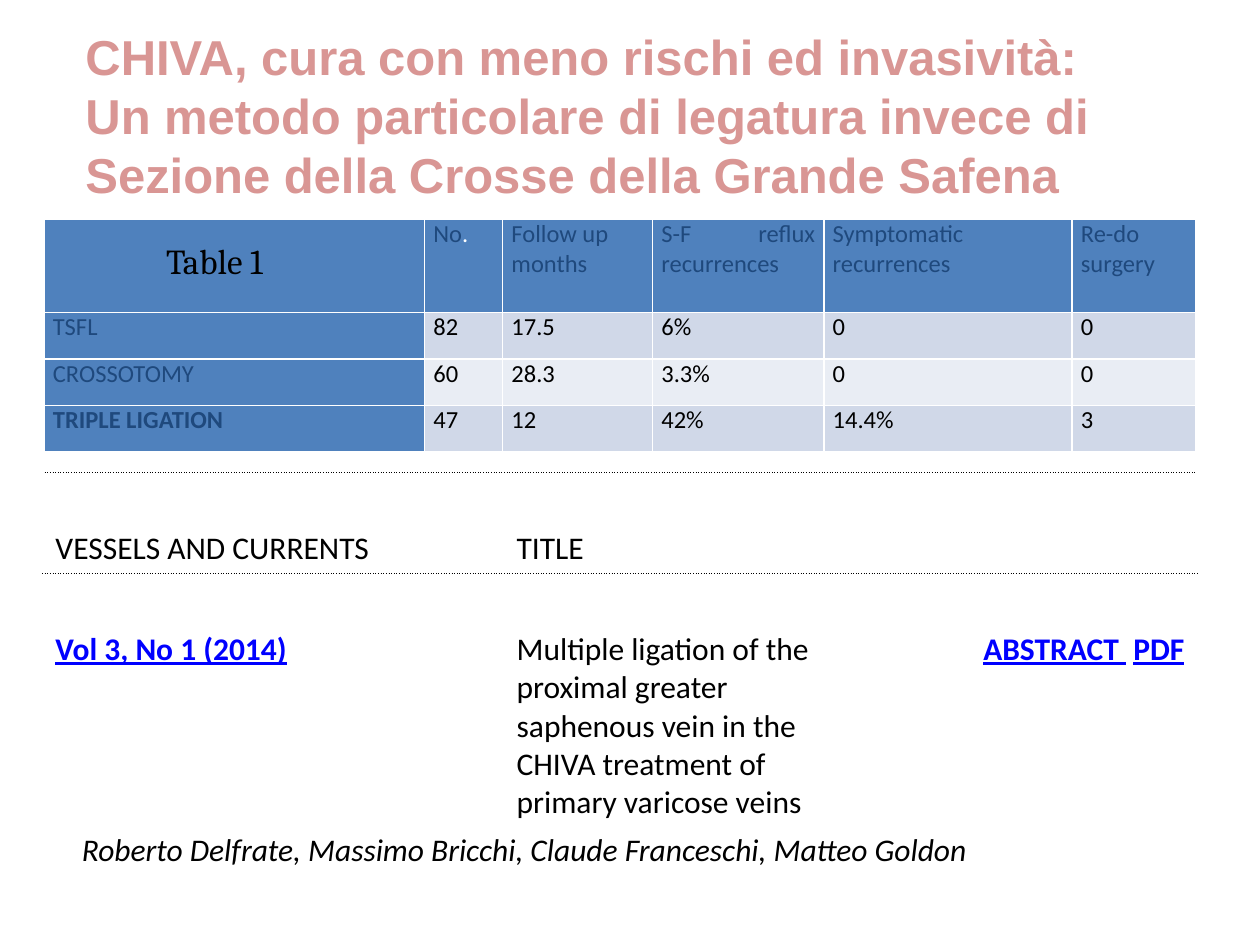
from lxml import etree
from pptx import Presentation
from pptx.dml.color import RGBColor
from pptx.enum.text import MSO_ANCHOR as Anchor, PP_ALIGN as Align
from pptx.oxml.ns import qn
from pptx.util import Inches, Pt

COLORS = {
    "white": "FFFFFF",
    "black": "000000",
    "navy": "1F497D",
    "blue": "4F81BD",
    "band": "D0D8E8",
    "pale": "E9EDF4",
    "link": "0000FF",
    "rose": "D99694",
}
RESULTS = [
    ("", "No", "Follow up\nmonths", "S-F reflux recurrences",
     "Symptomatic\nrecurrences", "Re-do\nsurgery"),
    ("TSFL", "82", "17.5", "6%", "0", "0"),
    ("CROSSOTOMY", "60", "28.3", "3.3%", "0", "0"),
    ("TRIPLE LIGATION", "47", "12", "42%", "14.4%", "3"),
]


def rgb(name):
    return RGBColor.from_string(COLORS[name])


def style(font, name, size, color, bold=False, italic=False):
    font.name, font.size = name, Pt(size)
    font.color.rgb = rgb(color)
    font.bold, font.italic = bold, italic


def write(frame, text, name, size, color, align=Align.LEFT, **flags):
    """Fill a text frame with one paragraph per line of text."""
    for index, line in enumerate(text.split("\n")):
        para = frame.add_paragraph() if index else frame.paragraphs[0]
        para.text = line
        para.alignment = align
        style(para.font, name, size, color, **flags)


def write_links(frame, pieces, align=Align.LEFT):
    """Write (text, is_link) pieces as runs; links are bold, blue and underlined."""
    para = frame.paragraphs[0]
    para.alignment = align
    for text, is_link in pieces:
        span = para.add_run()
        span.text = text
        style(span.font, "Calibri", 18, "link" if is_link else "black", bold=is_link)
        span.font.underline = is_link


def set_borders(cell, sides, color, width, dash="solid"):
    """Draw the given sides, in the order L, R, T, B."""
    properties = cell._tc.get_or_add_tcPr()
    for index, side in enumerate(sides):
        line = etree.Element(qn(f"a:ln{side}"), w=str(Pt(width)))
        fill = etree.SubElement(line, qn("a:solidFill"))
        etree.SubElement(fill, qn("a:srgbClr"), val=COLORS[color])
        etree.SubElement(line, qn("a:prstDash"), val=dash)
        properties.insert(index, line)


def fill_cell(cell, color):
    cell.fill.solid()
    cell.fill.fore_color.rgb = rgb(color)


def add_grid(page, left, top, widths, heights):
    table = page.shapes.add_table(
        len(heights), len(widths), Inches(left), Inches(top),
        Inches(sum(widths)), Inches(sum(heights))).table
    table.first_row = table.horz_banding = False
    for column, width in zip(table.columns, widths):
        column.width = Inches(width)
    for row, height in zip(table.rows, heights):
        row.height = Inches(height)
    return table


def add_results(page):
    table = add_grid(page, 0.35, 1.74, [3.02, 0.62, 1.19, 1.36, 1.97, 0.98],
                     [0.74, 0.37, 0.37, 0.37])
    for r, values in enumerate(RESULTS):
        for c, value in enumerate(values):
            cell = table.cell(r, c)
            heading = r == 0 or c == 0
            cell.margin_left = cell.margin_right = Inches(0.07)
            cell.margin_top = cell.margin_bottom = 0
            fill_cell(cell, "blue" if heading else "band" if r % 2 else "pale")
            set_borders(cell, "LRTB", "white", 1)
            if value:
                write(cell.text_frame, value, "Calibri", 14,
                      "navy" if heading else "black", Align.JUSTIFY,
                      bold=value == "TRIPLE LIGATION")
    period = table.cell(0, 1).text_frame.paragraphs[0].add_run()
    period.text = "."
    period.font.color.rgb = rgb("white")


def add_publication(page):
    table = add_grid(page, 0.34, 3.75, [3.66, 2.75, 2.75], [0.4, 0.4, 0.4, 1.6, 0.4])
    dotted_sides = {0: "T", 1: "B", 2: "T"}
    for r in range(5):
        for c in range(3):
            cell = table.cell(r, c)
            fill_cell(cell, "white")
            set_borders(cell, dotted_sides.get(r, ""), "black", 0.75, "sysDot")
    for r, first in ((0, 0), (1, 1), (2, 0), (4, 0)):
        table.cell(r, first).merge(table.cell(r, 2))

    for c, heading in enumerate(("VESSELS AND CURRENTS", "TITLE")):
        cell = table.cell(1, c)
        cell.vertical_anchor = Anchor.BOTTOM
        write(cell.text_frame, heading, "Calibri", 18, "black")

    issue, title, downloads = (table.cell(3, c).text_frame for c in range(3))
    write_links(issue, [("Vol 3, No 1 (2014)", True)])
    write(title, "Multiple ligation of the proximal greater saphenous vein in the "
          "CHIVA treatment of primary varicose veins", "Calibri", 18, "black")
    write_links(downloads, [("ABSTRACT ", True), (" ", False), ("PDF", True)],
                Align.RIGHT)

    authors = table.cell(4, 0)
    authors.margin_left = Inches(0.31)
    authors.vertical_anchor = Anchor.MIDDLE
    write(authors.text_frame,
          "Roberto Delfrate, Massimo Bricchi, Claude Franceschi, Matteo Goldon",
          "Calibri", 18, "black", italic=True)


def add_text(page, text, left, top, width, height, name, size, color, **flags):
    box = page.shapes.add_textbox(Inches(left), Inches(top), Inches(width), Inches(height))
    box.text_frame.word_wrap = True
    write(box.text_frame, text, name, size, color, **flags)
    return box


def main():
    deck = Presentation()
    deck.slide_width, deck.slide_height = Inches(10), Inches(7.5)
    page = deck.slides.add_slide(deck.slide_layouts[6])
    add_results(page)
    add_text(page, "Table 1", 1.22, 1.85, 1.36, 0.91, "Cambria", 20, "black")
    add_publication(page)
    title = add_text(
        page, "CHIVA, cura con meno rischi ed invasività: Un metodo particolare di "
        "legatura invece di Sezione della Crosse della Grande Safena",
        0.58, 0.16, 8.5, 1.51, "Arial", 28, "rose", bold=True)
    title.fill.solid()
    title.fill.fore_color.rgb = rgb("white")
    deck.save("out.pptx")


if __name__ == "__main__":
    main()
